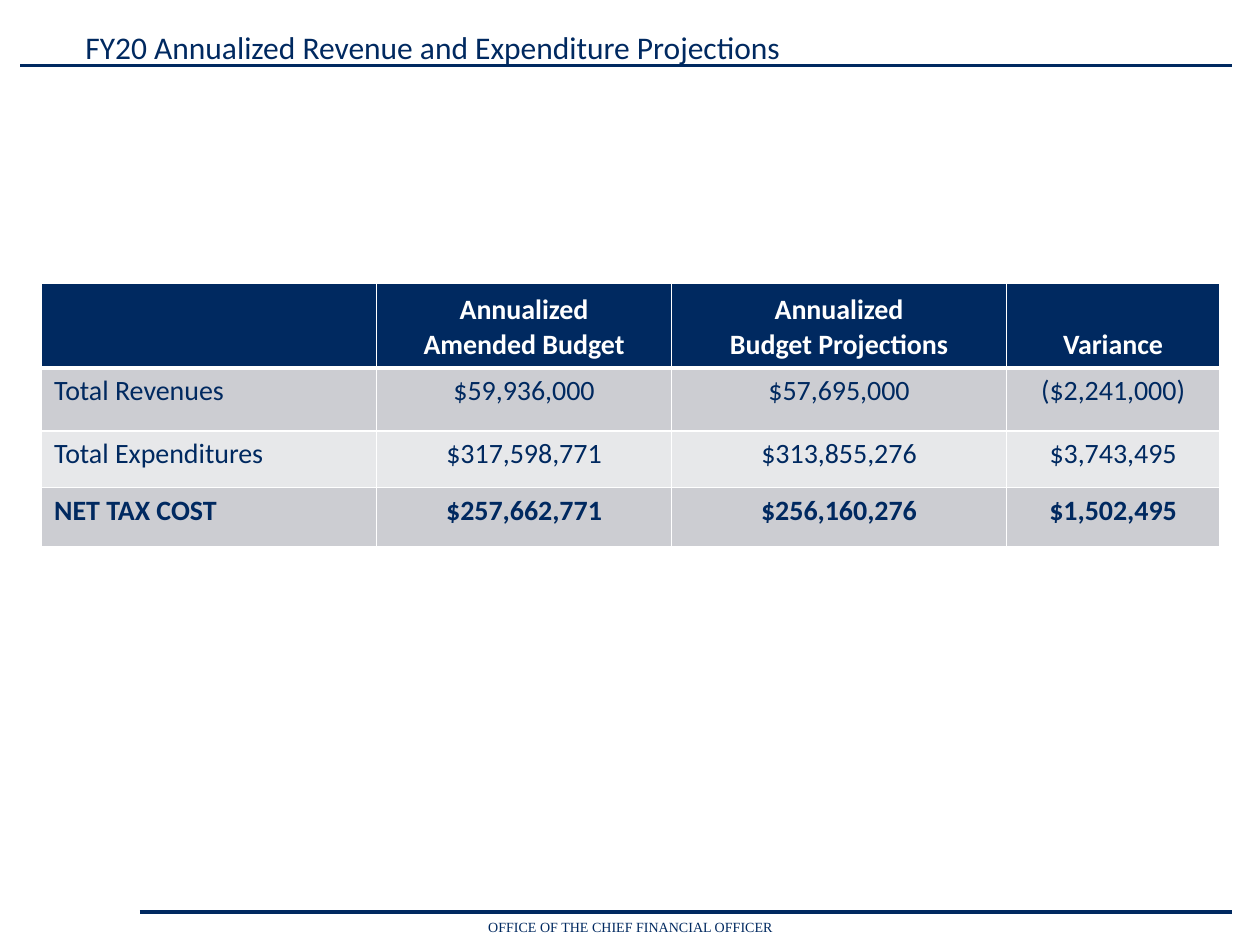
from lxml import etree
from pptx import Presentation
from pptx.dml.color import RGBColor
from pptx.enum.shapes import MSO_CONNECTOR
from pptx.enum.text import MSO_ANCHOR as Anchor, PP_ALIGN as Align
from pptx.oxml.ns import qn
from pptx.util import Inches, Pt

NAVY = RGBColor(0x00, 0x29, 0x60)
WHITE = RGBColor(0xFF, 0xFF, 0xFF)
BAND_DARK = RGBColor(0xCC, 0xCD, 0xD2)
BAND_LIGHT = RGBColor(0xE7, 0xE8, 0xEA)

TITLE_FONT = {"name": "Calibri", "size": Pt(18)}
TABLE_FONT = {"name": "Calibri", "size": Pt(16)}
FOOTER_FONT = {"name": "Times New Roman", "size": Pt(8)}

COLUMN_WIDTHS = [2.66, 2.34, 2.66, 1.69]
ROW_HEIGHTS = [0.67, 0.5, 0.45, 0.47]
BUDGET_ROWS = [
    ["", "Annualized\nAmended Budget", "Annualized\nBudget Projections", "Variance"],
    ["Total Revenues", "$59,936,000", "$57,695,000", "($2,241,000)"],
    ["Total Expenditures", "$317,598,771", "$313,855,276", "$3,743,495"],
    ["NET TAX COST", "$257,662,771", "$256,160,276", "$1,502,495"],
]


def write_text(frame, text, font_format, color, align):
    frame.text = text
    for paragraph in frame.paragraphs:
        paragraph.alignment = align
        for attribute, value in font_format.items():
            setattr(paragraph.font, attribute, value)
        paragraph.font.color.rgb = color


def add_label(slide, box, text, font_format, align):
    label = slide.shapes.add_textbox(*map(Inches, box))
    label.text_frame.word_wrap = True
    write_text(label.text_frame, text, font_format, NAVY, align)


def add_rule(slide, left, right, y):
    rule = slide.shapes.add_connector(
        MSO_CONNECTOR.STRAIGHT, Inches(left), Inches(y), Inches(right), Inches(y))
    rule.line.color.rgb = NAVY
    rule.line.width = Pt(2)
    etree.SubElement(rule._element.spPr, qn("a:effectLst"))


def add_header(slide, left, top, right):
    add_rule(slide, left, right, top + 0.35)
    add_label(slide, (left + 0.42, top, 6.33, 0.4),
              "FY20 Annualized Revenue and Expenditure Projections", TITLE_FONT, Align.LEFT)


def add_footer(slide, left, top, right):
    add_rule(slide, left, right, top)
    add_label(slide, (left + 1.45, top, 4.89, 0.24),
              "OFFICE OF THE CHIEF FINANCIAL OFFICER", FOOTER_FONT, Align.CENTER)


def set_borders(cell, widths):
    """Draw white borders; widths maps a side tag (lnL, lnR, lnT, lnB) to points."""
    properties = cell._tc.get_or_add_tcPr()
    for position, (side, points) in enumerate(widths.items()):
        border = etree.Element(qn(f"a:{side}"), w=str(Pt(points)))
        fill = etree.SubElement(border, qn("a:solidFill"))
        etree.SubElement(fill, qn("a:srgbClr"), val=str(WHITE))
        properties.insert(position, border)


def add_budget_table(slide, left, top, width, height):
    table = slide.shapes.add_table(
        len(ROW_HEIGHTS), len(COLUMN_WIDTHS), *map(Inches, (left, top, width, height))).table
    for column, column_width in zip(table.columns, COLUMN_WIDTHS):
        column.width = Inches(column_width)
    for row, row_height in zip(table.rows, ROW_HEIGHTS):
        row.height = Inches(row_height)

    last_row = len(BUDGET_ROWS) - 1
    for r, entries in enumerate(BUDGET_ROWS):
        is_header = r == 0
        band = NAVY if is_header else (BAND_DARK if r % 2 else BAND_LIGHT)
        row_font = {**TABLE_FONT, "bold": r in (0, last_row)}
        for c, entry in enumerate(entries):
            cell = table.cell(r, c)
            cell.fill.solid()
            cell.fill.fore_color.rgb = band
            cell.vertical_anchor = Anchor.BOTTOM if is_header else Anchor.TOP
            write_text(cell.text_frame, entry, row_font, WHITE if is_header else NAVY,
                       Align.CENTER if c else Align.LEFT)
            set_borders(cell, {"lnL": 1, "lnR": 1, "lnT": 3 if r == 1 else 1,
                               "lnB": 3 if is_header else 1})


def main():
    presentation = Presentation()
    presentation.slide_width = Inches(10)
    presentation.slide_height = Inches(7.5)
    slide = presentation.slides.add_slide(presentation.slide_layouts[6])
    add_header(slide, 0.16, 0.17, 9.78)
    add_budget_table(slide, 0.33, 2.25, 9.33, 2.08)
    add_footer(slide, 1.11, 7.24, 9.78)
    presentation.save("out.pptx")


if __name__ == "__main__":
    main()
